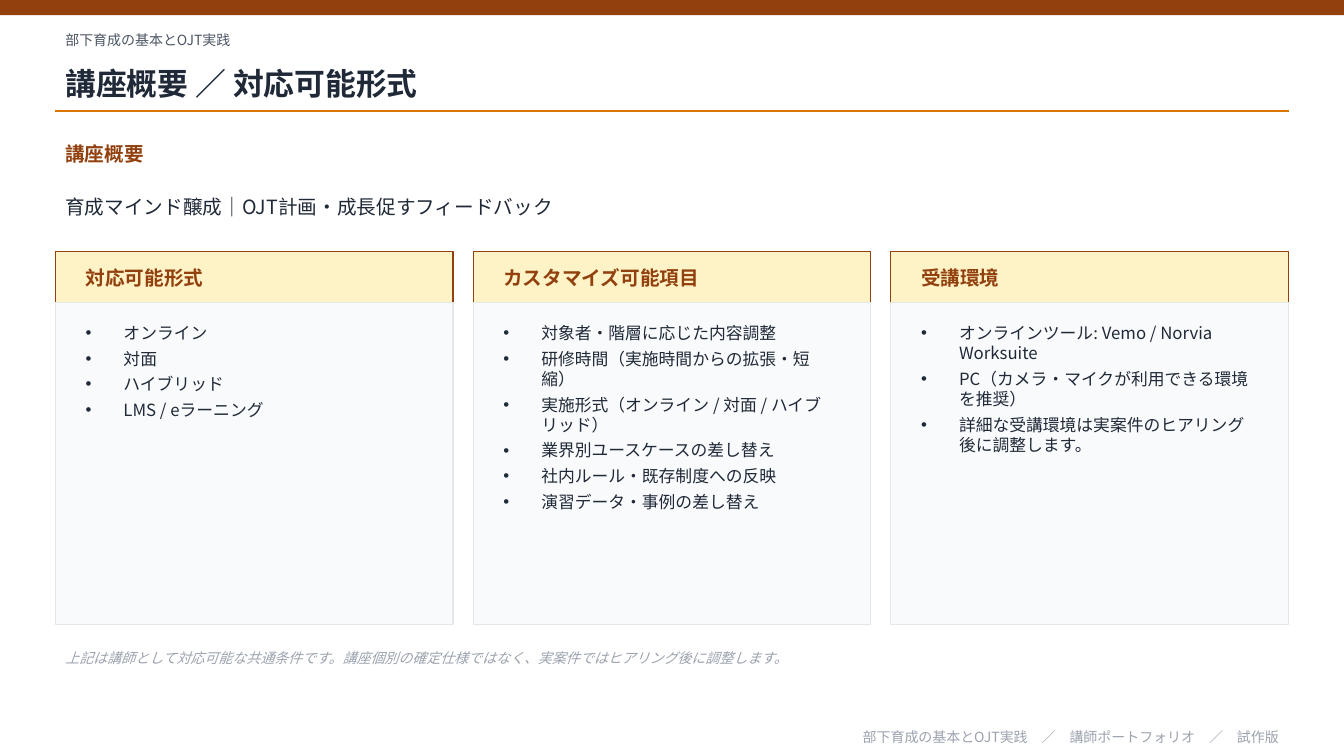
import pptx
import pptx.util
import pptx.dml.color
import pptx.enum.shapes
import pptx.enum.text
import pptx.oxml
import pptx.oxml.ns

Pt = pptx.util.Pt
RGB = pptx.dml.color.RGBColor
ANCHOR = pptx.enum.text.MSO_ANCHOR
ALIGN = pptx.enum.text.PP_ALIGN
RECTANGLE = pptx.enum.shapes.MSO_SHAPE.RECTANGLE

# Content
COURSE = "部下育成の基本とOJT実践"
TITLE = "講座概要 ／ 対応可能形式"
SUMMARY_HEADING = "講座概要"
SUMMARY = "育成マインド醸成｜OJT計画・成長促すフィードバック"
CARDS = [
    ("対応可能形式", ["オンライン", "対面", "ハイブリッド", "LMS / eラーニング"]),
    ("カスタマイズ可能項目", [
        "対象者・階層に応じた内容調整",
        "研修時間（実施時間からの拡張・短縮）",
        "実施形式（オンライン / 対面 / ハイブリッド）",
        "業界別ユースケースの差し替え",
        "社内ルール・既存制度への反映",
        "演習データ・事例の差し替え",
    ]),
    ("受講環境", [
        "オンラインツール: Vemo / Norvia Worksuite",
        "PC（カメラ・マイクが利用できる環境を推奨）",
        "詳細な受講環境は実案件のヒアリング後に調整します。",
    ]),
]
NOTICE = "上記は講師として対応可能な共通条件です。講座個別の確定仕様ではなく、実案件ではヒアリング後に調整します。"
FOOTER = "　／　".join([COURSE, "講師ポートフォリオ", "試作版"])

# Style and layout, in points
FONT = "Noto Sans CJK JP"
COLORS = {
    "brown": "92400E", "orange": "D97706", "cream": "FEF3C7", "panel": "F9FAFB",
    "border": "E5E7EB", "ink": "1F2937", "slate": "4B5563", "grey": "9CA3AF",
}
PAGE_WIDTH, PAGE_HEIGHT = 960, 540
MARGIN = 39.6
CONTENT_WIDTH = PAGE_WIDTH - 2 * MARGIN
CARD_GAP = 14.4
CARD_WIDTH = (CONTENT_WIDTH - CARD_GAP * (len(CARDS) - 1)) / len(CARDS)
CARD_TOP, HEADER_HEIGHT, PANEL_HEIGHT = 180, 36, 230.4
CARD_PADDING = 14.4
LIST_INDENT = 27


def color(name):
    return RGB.from_string(COLORS[name])


def place(shape, left, top, width, height):
    shape.left, shape.top = Pt(left), Pt(top)
    shape.width, shape.height = Pt(width), Pt(height)


def write(shape, lines, size, ink, bold=False, italic=False,
          align=ALIGN.LEFT, anchor=ANCHOR.MIDDLE, bullets=False):
    frame = shape.text_frame
    frame.text = "\n".join(lines)
    frame.word_wrap = True
    frame.auto_size = pptx.enum.text.MSO_AUTO_SIZE.NONE
    frame.vertical_anchor = anchor
    for para in frame.paragraphs:
        para.alignment = align
        para.space_before = Pt(0)
        if bullets:
            para.space_after = Pt(4)
            properties = para._p.get_or_add_pPr()
            properties.set("marL", str(Pt(LIST_INDENT)))
            properties.set("indent", str(-Pt(LIST_INDENT)))
            bullet = pptx.oxml.parse_xml(
                f'<a:buChar {pptx.oxml.ns.nsdecls("a")} char="•"/>')
            properties.append(bullet)
        for span in para.runs:
            span.font.name = FONT
            span.font.size = Pt(size)
            span.font.bold = bold
            span.font.italic = italic
            span.font.color.rgb = color(ink)
            east_asian = pptx.oxml.parse_xml(
                f'<a:ea {pptx.oxml.ns.nsdecls("a")} typeface="{FONT}"/>')
            span.font._element.append(east_asian)


def add_text(page, area, text, size, ink, **style):
    box = page.shapes.add_textbox(*map(Pt, area))
    write(box, [text], size, ink, **style)


def add_box(page, area, fill, line=None):
    box = page.shapes.add_shape(RECTANGLE, *map(Pt, area))
    box.shadow.inherit = False
    box.fill.solid()
    box.fill.fore_color.rgb = color(fill)
    if line:
        box.line.color.rgb = color(line)
        box.line.width = Pt(0.75)
    else:
        box.line.fill.background()


def add_rule(page, top):
    rule = page.shapes.add_connector(
        pptx.enum.shapes.MSO_CONNECTOR.STRAIGHT,
        Pt(MARGIN), Pt(top), Pt(MARGIN + CONTENT_WIDTH), Pt(top))
    rule.line.color.rgb = color("orange")
    rule.line.width = Pt(1)
    rule._element.spPr.append(
        pptx.oxml.parse_xml(f'<a:effectLst {pptx.oxml.ns.nsdecls("a")}/>'))


def add_card(page, body, left, heading, items):
    text_left = left + CARD_PADDING
    text_width = CARD_WIDTH - 2 * CARD_PADDING
    panel_top = CARD_TOP + HEADER_HEIGHT
    add_box(page, (left, CARD_TOP, CARD_WIDTH, HEADER_HEIGHT), "cream", "brown")
    add_text(page, (text_left, CARD_TOP, text_width, HEADER_HEIGHT),
             heading, 14, "brown", bold=True)
    add_box(page, (left, panel_top, CARD_WIDTH, PANEL_HEIGHT), "panel", "border")
    # The list goes in front of its panel
    page.shapes.element.append(body._element)
    place(body, text_left, panel_top + 10.8, text_width, 205.2)
    write(body, items, 12, "ink", anchor=ANCHOR.TOP, bullets=True)


def main():
    deck = pptx.Presentation()
    deck.slide_width, deck.slide_height = Pt(PAGE_WIDTH), Pt(PAGE_HEIGHT)
    page = deck.slides.add_slide(deck.slide_layouts.get_by_name("Comparison"))
    title, *bodies = page.placeholders

    # Heading
    add_box(page, (0, 0, PAGE_WIDTH, 10.8), "brown")
    add_text(page, (MARGIN, 18, CONTENT_WIDTH, 21.6), COURSE, 10, "slate")
    place(title, MARGIN, 39.6, CONTENT_WIDTH, 39.6)
    write(title, [TITLE], 22, "ink", bold=True)
    add_rule(page, 79.2)

    # Summary
    add_text(page, (MARGIN, 97.2, CONTENT_WIDTH, 25.2),
             SUMMARY_HEADING, 14, "brown", bold=True)
    add_text(page, (MARGIN, 126, CONTENT_WIDTH, 43.2), SUMMARY, 14, "ink")

    # Cards
    for index, (body, (heading, items)) in enumerate(zip(bodies, CARDS)):
        left = MARGIN + index * (CARD_WIDTH + CARD_GAP)
        add_card(page, body, left, heading, items)
    for spare in bodies[len(CARDS):]:
        page.shapes.element.remove(spare._element)

    # Notice and footer
    add_text(page, (MARGIN, 457.2, CONTENT_WIDTH, 25.2), NOTICE, 10, "grey", italic=True)
    add_text(page, (MARGIN, 518.4, CONTENT_WIDTH, 15.84), FOOTER, 10, "grey",
             align=ALIGN.RIGHT)

    deck.save("out.pptx")


if __name__ == "__main__":
    main()
